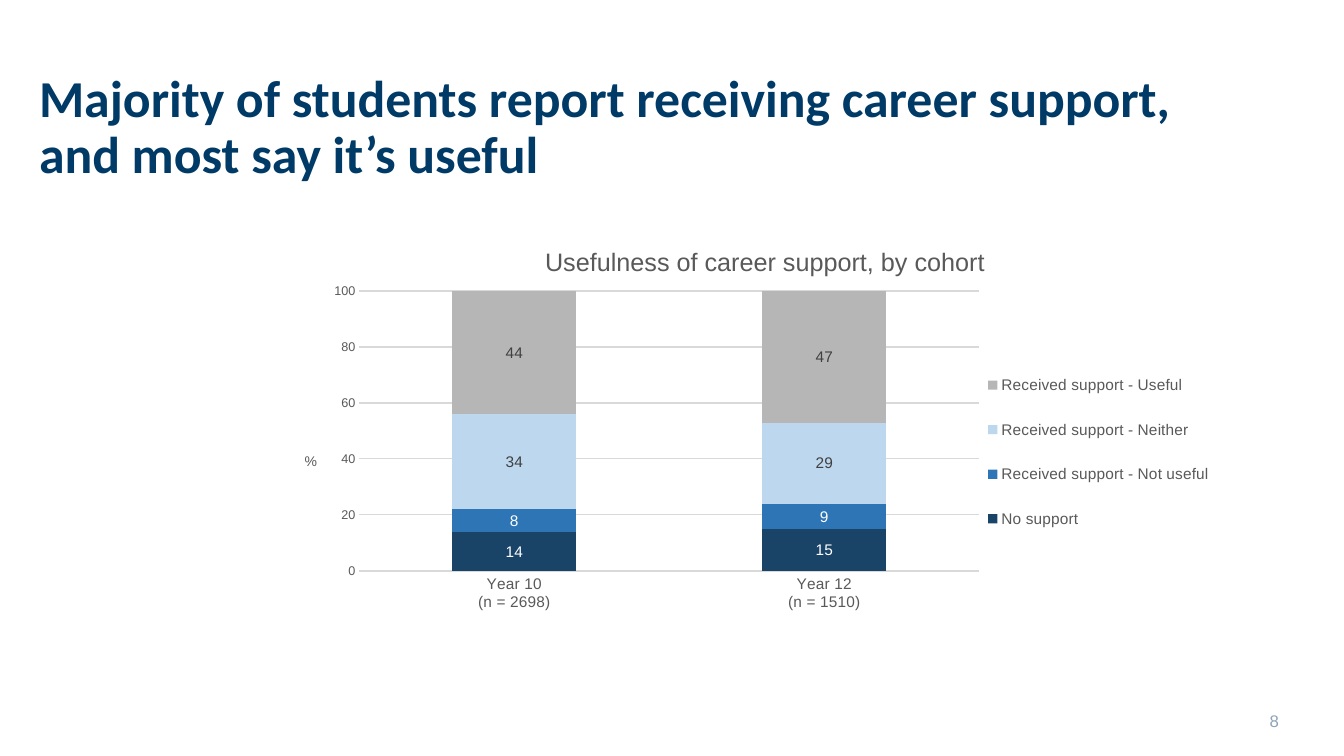
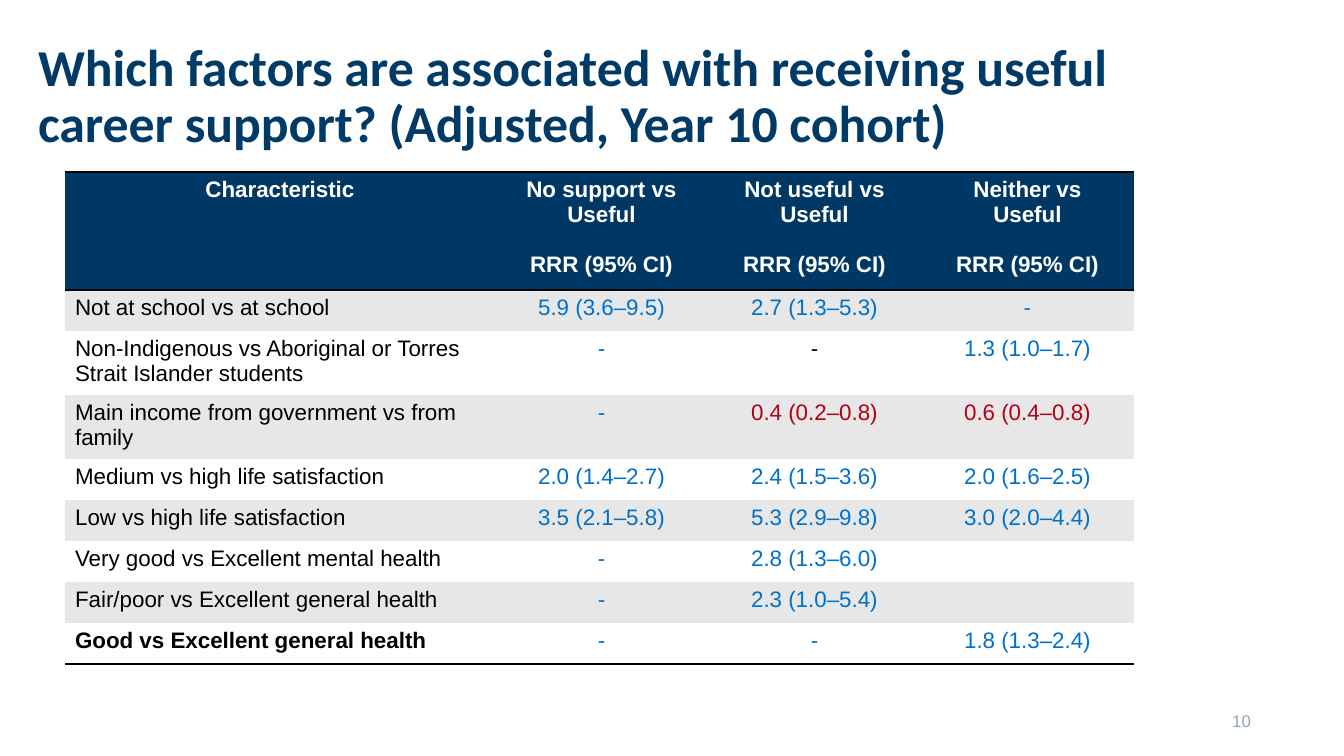
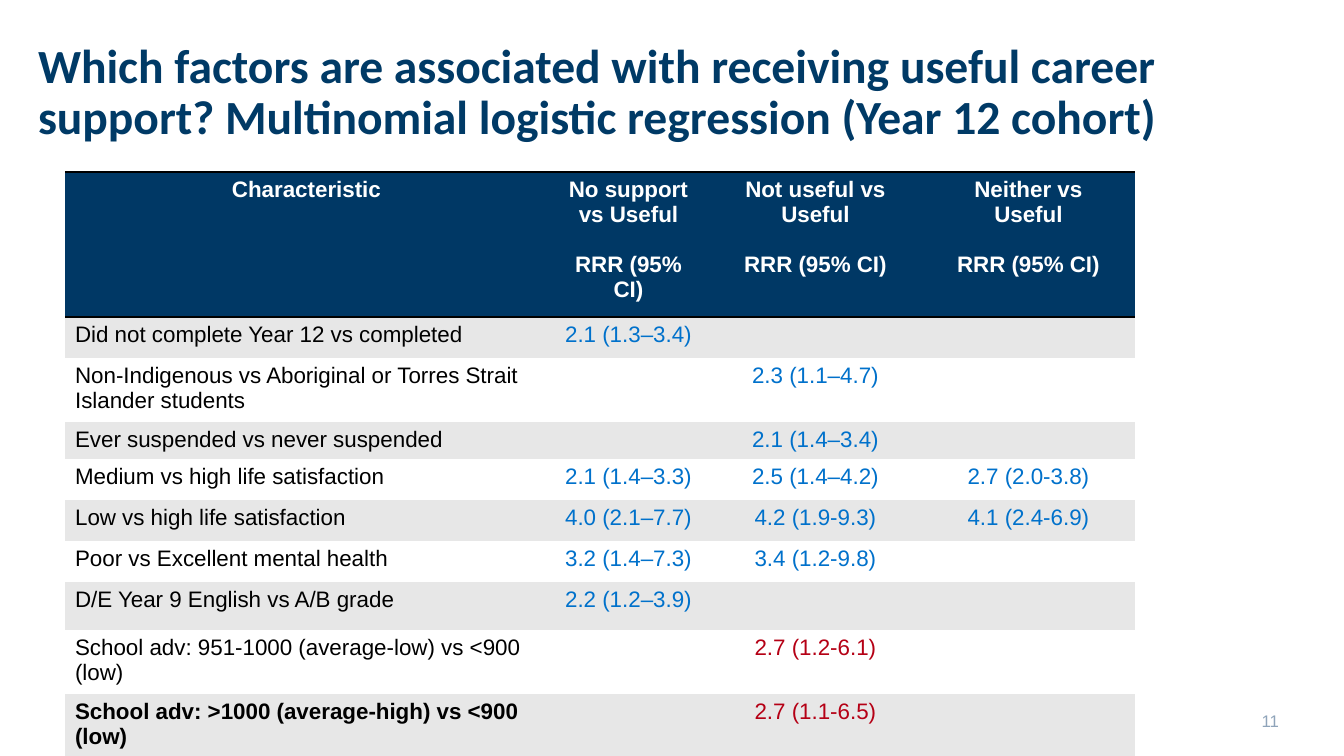
from lxml import etree
from pptx import Presentation
from pptx.chart.data import CategoryChartData
from pptx.dml.color import RGBColor
from pptx.enum.chart import XL_CHART_TYPE, XL_LABEL_POSITION, XL_LEGEND_POSITION, XL_TICK_MARK
from pptx.enum.text import MSO_ANCHOR, MSO_AUTO_SIZE, PP_ALIGN
from pptx.oxml.ns import qn
from pptx.util import Emu, Pt

STACKED = XL_CHART_TYPE.COLUMN_STACKED
MIDDLE_LABEL = XL_LABEL_POSITION.CENTER
LEGEND_RIGHT = XL_LEGEND_POSITION.RIGHT
NO_TICK = XL_TICK_MARK.NONE
TOP, MIDDLE = MSO_ANCHOR.TOP, MSO_ANCHOR.MIDDLE
NO_FIT = MSO_AUTO_SIZE.NONE
LEFT, CENTER, RIGHT = PP_ALIGN.LEFT, PP_ALIGN.CENTER, PP_ALIGN.RIGHT

SCALE = 914400 / 100.8
NAVY, HEAD, PALE = "003A66", "003865", "8FA4BA"
BLACK, WHITE, BAND = "000000", "FFFFFF", "E7E7E7"
BLUE, RED = "0071CB", "B50015"
GREY, DARK, GRID = "595959", "404040", "D9D9D9"
PLAIN_STYLE = "{2D5ABB26-0587-4C30-8999-92F81FD0307C}"

RATIO = "RRR (95% CI)"
HEADER = [
    ["Characteristic"],
    ["No support vs Useful", RATIO],
    ["Not useful vs Useful", RATIO],
    ["Neither vs", "Useful", RATIO],
]
YEAR_TEN = [
    ["Not at school vs at school", "5.9 (3.6–9.5)", "2.7 (1.3–5.3)", "-"],
    ["Non-Indigenous vs Aboriginal or Torres Strait Islander students", "-", "-", "1.3 (1.0–1.7)"],
    ["Main income from government vs from family", "-", "0.4 (0.2–0.8)", "0.6 (0.4–0.8)"],
    ["Medium vs high life satisfaction", "2.0 (1.4–2.7)", "2.4 (1.5–3.6)", "2.0 (1.6–2.5)"],
    ["Low vs high life satisfaction", "3.5 (2.1–5.8)", "5.3 (2.9–9.8)", "3.0 (2.0–4.4)"],
    ["Very good vs Excellent mental health", "-", "2.8 (1.3–6.0)", ""],
    ["Fair/poor vs Excellent general health", "-", "2.3 (1.0–5.4)", ""],
    ["Good vs Excellent general health", "-", "-", "1.8 (1.3–2.4)"],
]
YEAR_TWELVE = [
    ["Did not complete Year 12 vs completed", "2.1 (1.3–3.4)", "", ""],
    ["Non-Indigenous vs Aboriginal or Torres Strait Islander students", "", "2.3 (1.1–4.7)", ""],
    ["Ever suspended vs never suspended", "", "2.1 (1.4–3.4)", ""],
    ["Medium vs high life satisfaction", "2.1 (1.4–3.3)", "2.5 (1.4–4.2)", "2.7 (2.0-3.8)"],
    ["Low vs high life satisfaction", "4.0 (2.1–7.7)", "4.2 (1.9-9.3)", "4.1 (2.4-6.9)"],
    ["Poor vs Excellent mental health", "3.2 (1.4–7.3)", "3.4 (1.2-9.8)", ""],
    ["D/E Year 9 English vs A/B grade", "2.2 (1.2–3.9)", "", ""],
    ["School adv: 951-1000 (average-low) vs <900 (low)", "", "2.7 (1.2-6.1)", ""],
    ["School adv: >1000 (average-high) vs <900 (low)", "", "2.7 (1.1-6.5)", ""],
]
SERIES = [
    ("No support", (14, 15), "1A4368", WHITE),
    ("Received support - Not useful", (8, 9), "2E75B6", WHITE),
    ("Received support - Neither", (34, 29), "BDD7EE", DARK),
    ("Received support - Useful", (44, 47), "B6B6B6", DARK),
]


def px(n):
    return Emu(round(n * SCALE))


def rgb(code):
    return RGBColor.from_string(code)


def put(thing, **values):
    for name, value in values.items():
        setattr(thing, name, value)


def style(font, size, color, name="Arial", bold=False):
    put(font, size=Pt(size), name=name, bold=bold)
    font.color.rgb = rgb(color)


def frame(shape, anchor, right=0):
    """Give a shape's text frame its anchor and flush margins."""
    text = shape.text_frame
    put(text, word_wrap=True, auto_size=NO_FIT, vertical_anchor=anchor,
        margin_left=0, margin_top=0, margin_bottom=0, margin_right=px(right))
    return text


def write(para, text, align, *look, **more):
    put(para, alignment=align, **more)
    run = para.add_run()
    run.text = text
    style(run.font, *look)


def start(deck, title, left, top, size, number, inset=0):
    """Add a slide with its title and page number."""
    slide = deck.slides.add_slide(deck.slide_layouts[5])
    head = slide.shapes.title
    put(head, left=px(left), top=px(top), width=px(1159), height=px(118))
    write(frame(head, TOP).paragraphs[0], title, LEFT, size, NAVY, "Calibri", True,
          line_spacing=0.9)
    box = slide.shapes.add_textbox(px(977), px(701), px(302), px(40))
    write(frame(box, MIDDLE, inset).paragraphs[0], str(number), RIGHT, 12, PALE)
    return slide


def border(cell, sides):
    props = cell._tc.get_or_add_tcPr()
    for side in sides:
        line = etree.SubElement(props, qn("a:ln" + side), w=str(Pt(2)))
        fill = etree.SubElement(line, qn("a:solidFill"))
        etree.SubElement(fill, qn("a:srgbClr"), val=BLACK)


def paint(cell, color):
    cell.fill.solid()
    cell.fill.fore_color.rgb = rgb(color)


def fill_head(cell, lines):
    border(cell, "TB")
    paint(cell, HEAD)
    text = cell.text_frame
    for i, line in enumerate(lines):
        para = text.add_paragraph() if i else text.paragraphs[0]
        gap = Pt(18) if line == RATIO else Pt(0)
        write(para, line, CENTER, 16, WHITE, "Arial", True, space_before=gap)


def fill_cell(cell, text, align, color, bold):
    para = cell.text_frame.paragraphs[0]
    if text:
        write(para, text, align, 16, color, "Arial", bold)
    else:
        etree.SubElement(para._p, qn("a:endParaRPr"), sz="1600")


def add_grid(slide, rows, widths, heights, marks):
    """Add a banded table; marks maps (row, column) to a special text colour."""
    shape = slide.shapes.add_table(len(heights), len(widths), px(65), px(172),
                                   px(sum(widths)), px(sum(heights)))
    table = shape.table
    put(table, first_row=False, horz_banding=False)
    table._tbl.tblPr.find(qn("a:tableStyleId")).text = PLAIN_STYLE
    for col, width in zip(table.columns, widths):
        col.width = px(width)
    for row, height in zip(table.rows, heights):
        row.height = px(height)
    for c, lines in enumerate(HEADER):
        fill_head(table.cell(0, c), lines)
    for r, row in enumerate(rows, 1):
        last = r == len(rows)
        for c, text in enumerate(row):
            cell = table.cell(r, c)
            border(cell, "B" if last else "")
            paint(cell, BAND if r % 2 else WHITE)
            color = marks.get((r, c), BLUE if c else BLACK)
            fill_cell(cell, text, CENTER if c else LEFT, color, last and c == 0)


def place(chart, query, index, **spots):
    """Fix the place of a chart part, in fractions of the chart."""
    host = chart.element.xpath(query)[0]
    for old in host.findall(qn("c:layout")):
        host.remove(old)
    layout = etree.Element(qn("c:layout"))
    host.insert(index, layout)
    manual = etree.SubElement(layout, qn("c:manualLayout"))
    if host.tag == qn("c:plotArea"):
        etree.SubElement(manual, qn("c:layoutTarget"), val="inner")
    for name in "xy":
        etree.SubElement(manual, qn(f"c:{name}Mode"), val="edge")
    for name, value in spots.items():
        etree.SubElement(manual, qn("c:" + name), val=str(value))


def rule(line):
    line.color.rgb = rgb(GRID)
    line.width = Pt(0.75)


def name_part(part, text, size):
    put(part.text_frame, text=text)
    style(part.text_frame.paragraphs[0].runs[0].font, size, GREY)


def set_axes(chart):
    cat, val = chart.category_axis, chart.value_axis
    put(cat, major_tick_mark=NO_TICK)
    style(cat.tick_labels.font, 11, GREY)
    rule(cat.format.line)
    put(val, major_tick_mark=NO_TICK, minimum_scale=0, maximum_scale=100,
        major_unit=20, has_major_gridlines=True)
    style(val.tick_labels.font, 9, GREY)
    put(val.tick_labels, number_format="0", number_format_is_linked=False)
    val.format.line.fill.background()
    rule(val.major_gridlines.format.line)
    name_part(val.axis_title, "%", 10)
    body = chart.element.xpath("//c:valAx/c:title//a:bodyPr")[0]
    body.set("rot", "0")
    body.set("vert", "horz")


def add_stack(slide):
    data = CategoryChartData(number_format="0")
    data.categories = ["Year 10\n(n = 2698)", "Year 12\n(n = 1510)"]
    for name, values, *_ in SERIES:
        data.add_series(name, values)
    chart = slide.shapes.add_chart(STACKED, px(283), px(220), px(954), px(418), data).chart
    style(chart.font, 10, BLACK)
    put(chart, has_title=True, has_legend=True)
    name_part(chart.chart_title, "Usefulness of career support, by cohort", 18)
    put(chart.legend, position=LEGEND_RIGHT, include_in_layout=False)
    style(chart.legend.font, 11, GREY)
    set_axes(chart)
    plot = chart.plots[0]
    put(plot, gap_width=150, overlap=100, vary_by_categories=False)
    for series, (_, _, color, ink) in zip(plot.series, SERIES):
        paint(series.format, color)
        labels = series.data_labels
        put(labels, show_value=True, number_format="0",
            number_format_is_linked=False, position=MIDDLE_LABEL)
        style(labels.font, 11, ink)
    place(chart, "//c:plotArea", 0, x=0.08, y=0.17, w=0.65, h=0.67)
    place(chart, "//c:chart/c:title", 1, x=0.27, y=0.05)
    place(chart, "//c:valAx/c:title", 1, x=0.02, y=0.55)
    place(chart, "//c:legend", 1, x=0.73, y=0.31, w=0.25, h=0.49)


def main():
    deck = Presentation()
    put(deck, slide_width=px(1344), slide_height=px(756))

    slide = start(deck, "Majority of students report receiving career support, "
                  "and most say it’s useful", 39, 73, 37, 8)
    add_stack(slide)

    ask = "Which factors are associated with receiving useful career support? "
    slide = start(deck, ask + "(Adjusted, Year 10 cohort)", 38, 42, 37, 10, inset=28)
    add_grid(slide, YEAR_TEN, [430, 213, 213, 213], [118, 41, 64, 64] + [41] * 5,
             {(2, 2): BLACK, (3, 2): RED, (3, 3): RED})

    slide = start(deck, ask + "Multinomial logistic regression (Year 12 cohort)",
                  38, 42, 34, 11)
    add_grid(slide, YEAR_TWELVE, [483, 161, 213, 213],
             [145, 41, 64, 37, 41, 41, 41, 48, 64, 64], {(8, 2): RED, (9, 2): RED})

    deck.save("out.pptx")


if __name__ == "__main__":
    main()
